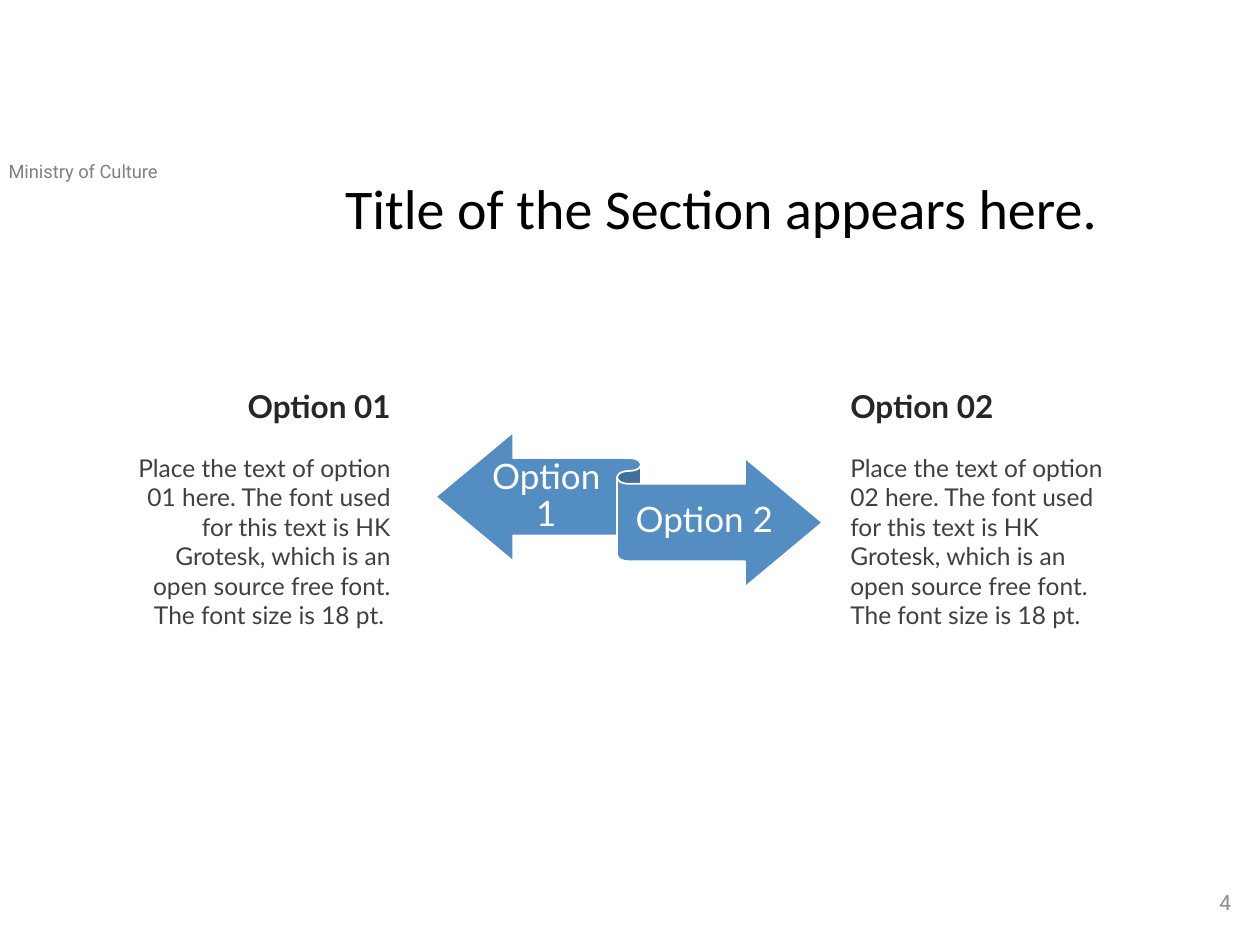
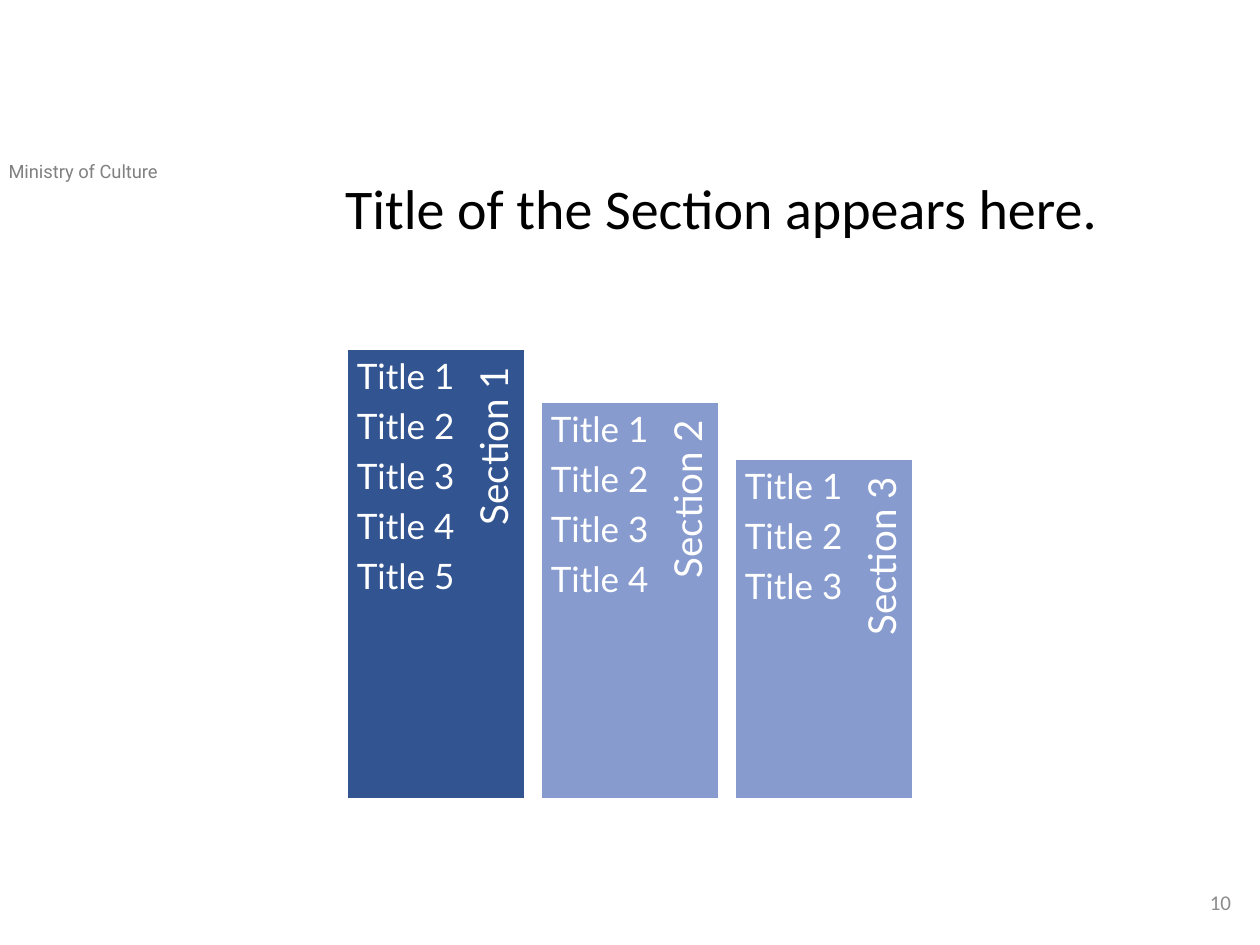
from pptx import Presentation
from pptx.dml.color import RGBColor
from pptx.enum.shapes import MSO_SHAPE
from pptx.enum.text import MSO_ANCHOR, MSO_AUTO_SIZE, PP_ALIGN
from pptx.util import Pt

COLORS = {
    "title": "000000",
    "heading": "262626",
    "body": "404040",
    "header": "808080",
    "number": "8C8C8C",
    "white": "FFFFFF",
    "ribbon": "538DC1",
    "active": "325491",
    "panel": "879BCE",
}
TITLE_ONLY = 5
STANDARD_INSETS = (7.2, 3.6, 7.2, 3.6)


def color(name):
    """Return the named colour."""
    return RGBColor.from_string(COLORS[name])


def format_frame(frame, insets=STANDARD_INSETS, anchor=MSO_ANCHOR.TOP):
    """Set wrapping, insets and vertical anchor of a text frame."""
    frame.word_wrap = True
    frame.auto_size = MSO_AUTO_SIZE.NONE
    frame.vertical_anchor = anchor
    frame.margin_left, frame.margin_top, frame.margin_right, frame.margin_bottom = map(Pt, insets)


def write(para, text, size, ink, font="Lato", bold=False, align=PP_ALIGN.LEFT,
          spacing=1.0, before=0, after=0):
    """Write formatted text into a paragraph."""
    para.alignment = align
    para.line_spacing = spacing
    para.space_before = Pt(before)
    para.space_after = Pt(after)
    span = para.add_run()
    span.text = text
    span.font.name = font
    span.font.size = Pt(size)
    span.font.bold = bold
    span.font.color.rgb = color(ink)


def add_text(page, place, lines, insets=STANDARD_INSETS, anchor=MSO_ANCHOR.TOP, **style):
    """Add a text box with one paragraph per line and return it."""
    box = page.shapes.add_textbox(*map(Pt, place))
    frame = box.text_frame
    format_frame(frame, insets, anchor)
    for index, line in enumerate(lines):
        para = frame.add_paragraph() if index else frame.paragraphs[0]
        write(para, line, **style)
    return box


def add_filled_shape(page, kind, place, fill):
    """Add a preset shape with a thin white outline."""
    shape = page.shapes.add_shape(kind, *map(Pt, place))
    shape.shadow.inherit = False
    shape.fill.solid()
    shape.fill.fore_color.rgb = color(fill)
    shape.line.color.rgb = color("white")
    shape.line.width = Pt(1)


def add_page(deck, number, number_font):
    """Add a slide with its header, title and page number."""
    page = deck.slides.add_slide(deck.slide_layouts[TITLE_ONLY])
    title = page.shapes.title
    title.left, title.top, title.width, title.height = map(Pt, (190, 100, 459.5, 57))
    format_frame(title.text_frame)
    write(title.text_frame.paragraphs[0], "Title of the Section appears here.",
          size=32, ink="title", font="Calibri", spacing=0.9)
    add_text(page, (-2.2, 87.8, 157, 20), ["Ministry of Culture"],
             size=10.5, ink="header", font="Roboto")
    add_text(page, (548.6, 501, 162, 28.8), [number], anchor=MSO_ANCHOR.MIDDLE,
             size=12, ink="number", font=number_font, align=PP_ALIGN.RIGHT)
    return page


def add_option(page, left, width, heading, body, align):
    """Add an option heading with its description."""
    box = add_text(page, (left, 217.5, width, 163.5), [heading],
                   size=18, ink="heading", bold=True, align=align)
    write(box.text_frame.add_paragraph(), body, size=14, ink="body", align=align, before=16.2)


def add_ribbon_label(page, place, text):
    """Add a centred label on one arm of the ribbon."""
    add_text(page, place, [text], insets=(0, 5.6, 0, 5.6), anchor=MSO_ANCHOR.MIDDLE,
             size=20, ink="white", align=PP_ALIGN.CENTER, spacing=0.9, after=7)


def add_section_panel(page, left, top, fill, name, title_count):
    """Add a bottom-aligned panel with its titles and upright section name."""
    height = 456.3 - top
    add_filled_shape(page, MSO_SHAPE.RECTANGLE, (left, top, 101.5, height), fill)
    length, thickness = height * 0.9, 26.6
    label = add_text(
        page,
        (left + 86.1 - length / 2, top + (length - thickness) / 2, length, thickness),
        [name], insets=(6.5, 0, 10, 2.2), anchor=MSO_ANCHOR.MIDDLE,
        size=22, ink="white", align=PP_ALIGN.RIGHT, spacing=0.9, after=7.7)
    label.rotation = 270
    titles = [f"Title {number}" for number in range(1, title_count + 1)]
    add_text(page, (left, top, 72, height), titles, insets=(5.6,) * 4,
             size=20, ink="white", spacing=0.9, after=7)


def build_options(deck):
    """Build the slide that compares two options."""
    page = add_page(deck, "4", "Roboto")
    add_filled_shape(page, MSO_SHAPE.LEFT_RIGHT_RIBBON, (249, 247, 221, 88.5), "ribbon")
    add_ribbon_label(page, (275.8, 262.2, 72.7, 43.2), "Option 1")
    add_ribbon_label(page, (359.3, 276.5, 86.4, 43.2), "Option 2")
    description = ("Place the text of option {} here. The font used for this text is "
                   "HK Grotesk, which is an open source free font. The font size is 18 pt.")
    add_option(page, 66.2, 164.2, "Option 01", description.format("01") + " ", PP_ALIGN.RIGHT)
    add_option(page, 478.8, 159, "Option 02", description.format("02"), PP_ALIGN.LEFT)


def build_sections(deck):
    """Build the slide with three descending section panels."""
    page = add_page(deck, "10", "Calibri")
    panels = [(199.5, "active", 5), (229.9, "panel", 4), (262.6, "panel", 3)]
    for index, (top, fill, title_count) in enumerate(panels):
        add_section_panel(page, 198.3 + 110.85 * index, top, fill,
                          f"Section {index + 1}", title_count)


def main():
    """Build and save the deck."""
    deck = Presentation()
    deck.slide_width, deck.slide_height = Pt(720), Pt(540)
    build_options(deck)
    build_sections(deck)
    deck.save("out.pptx")


if __name__ == "__main__":
    main()
